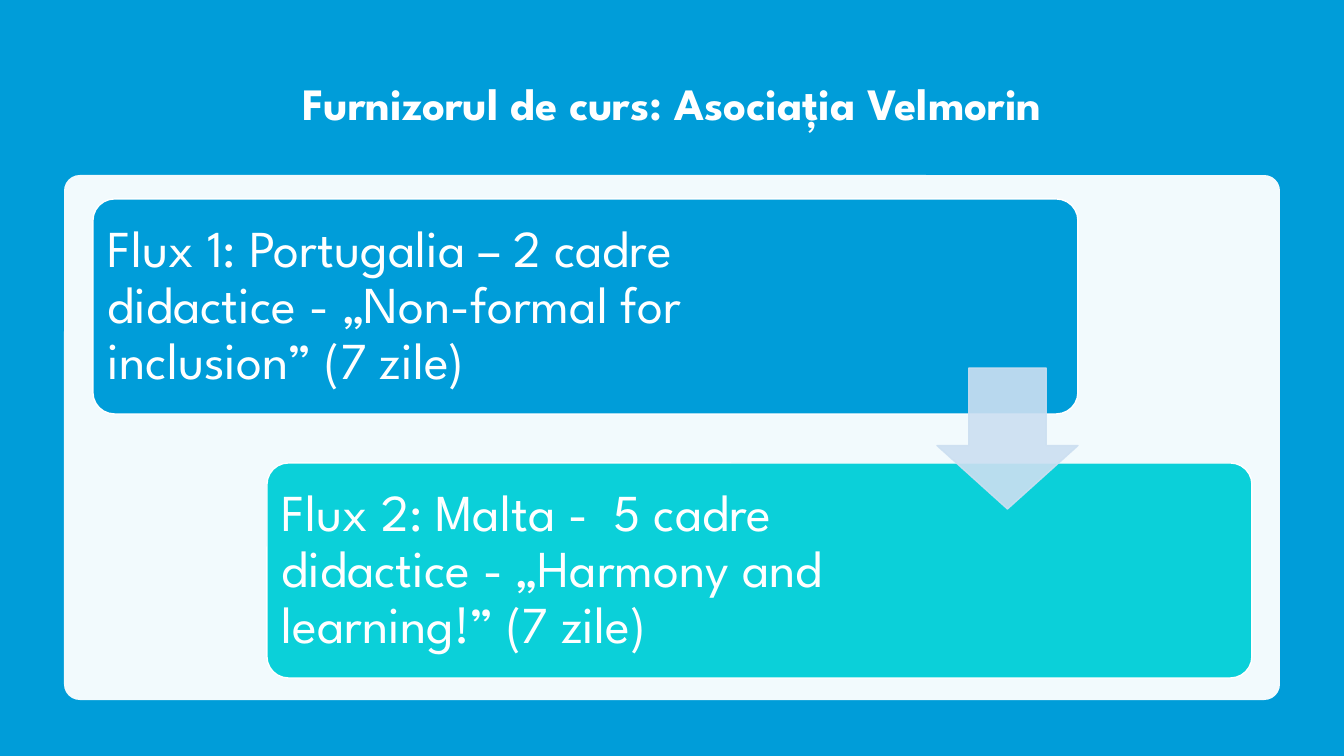
from lxml.etree import SubElement
from pptx import Presentation
from pptx.dml.color import RGBColor
from pptx.enum.shapes import MSO_SHAPE
from pptx.enum.text import MSO_ANCHOR, MSO_AUTO_SIZE, PP_ALIGN
from pptx.oxml.ns import qn
from pptx.util import Pt

PX = 914400 / 100.8  # EMU in one px
THEME = {
    "blue": RGBColor.from_string("009DD9"),
    "teal": RGBColor.from_string("0BD0D9"),
    "pale": RGBColor.from_string("CCDFF1"),
    "white": RGBColor.from_string("FFFFFF"),
    "font": "League Spartan",
    "head": Pt(32),
    "body": Pt(37),
}


def draw(kind, box, fill, line=None, adj=(), alpha=100):
    shape = slide.shapes.add_shape(kind, *[round(n * PX) for n in box])
    shape.shadow.inherit = False
    for i, part in enumerate(adj):
        shape.adjustments[i] = part
    shape.fill.solid()
    shape.fill.fore_color.rgb = THEME[fill]
    if line:
        shape.line.color.rgb = THEME[line]
        shape.line.width = Pt(1)
    else:
        shape.line.fill.background()
    if alpha < 100:
        for color in shape._element.spPr.iter(qn("a:srgbClr")):
            SubElement(color, qn("a:alpha"), val=str(alpha * 1000))


def write(shape, text, inset, align, size, bold):
    frame = shape.text_frame
    frame.text = text
    para = frame.paragraphs[0]
    looks = {
        frame: {"word_wrap": True, "auto_size": MSO_AUTO_SIZE.NONE,
                "vertical_anchor": MSO_ANCHOR.MIDDLE,
                **{f"margin_{side}": round(n * PX) for side, n in inset.items()}},
        para: {"alignment": align, "line_spacing": 0.9, "space_before": Pt(0)},
        para.runs[0].font: {"name": THEME["font"], "size": THEME[size], "bold": bold},
    }
    for item, values in looks.items():
        for name, value in values.items():
            setattr(item, name, value)
    para.runs[0].font.color.rgb = THEME["white"]


deck = Presentation()
deck.slide_width, deck.slide_height = round(1344 * PX), round(756 * PX)
slide = deck.slides.add_slide(deck.slide_layouts[5])

# Background
slide.background.fill.solid()
slide.background.fill.fore_color.rgb = THEME["blue"]

# Title
title = slide.shapes.title
for name, n in {"left": 93, "top": 50, "width": 1159, "height": 111}.items():
    setattr(title, name, round(n * PX))
write(title, "Furnizorul de curs: Asociația Velmorin", {}, PP_ALIGN.CENTER, "head", True)

# Panel
draw(MSO_SHAPE.ROUNDED_RECTANGLE, (64, 175, 1216, 525), "white", adj=[0.03], alpha=95)

# Course cards, each one step right and down
CARDS = [
    ("blue", 775, "Flux 1: Portugalia – 2 cadre didactice - „Non-formal for inclusion” (7 zile)"),
    ("teal", 671, "Flux 2: Malta -  5 cadre didactice - „Harmony and learning!” (7 zile)"),
]
INSET = dict.fromkeys(("left", "top", "right", "bottom"), 15)
for i, (fill, wide, text) in enumerate(CARDS):
    left, top = 93 + 174 * i, 199 + 264 * i
    draw(MSO_SHAPE.ROUNDED_RECTANGLE, (left, top, 985, 215), fill, "white", [0.1])
    label = slide.shapes.add_textbox(*[round(n * PX) for n in (left, top, wide, 215)])
    write(label, text, INSET, PP_ALIGN.LEFT, "body", False)

# Arrow from the first card to the second: head length, then shaft width
draw(MSO_SHAPE.DOWN_ARROW, (937, 368, 141, 141), "pale", "pale", [0.55, 0.45], 90)

deck.save("out.pptx")
